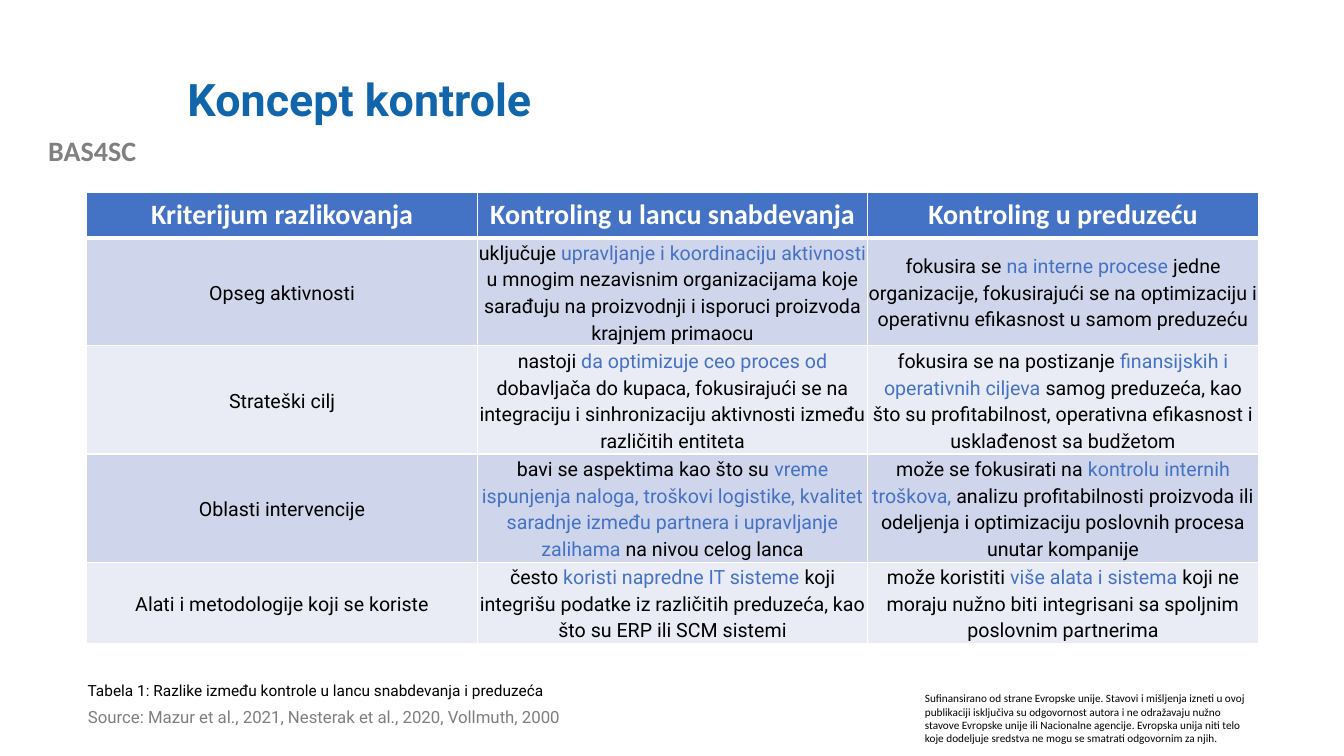
from lxml.etree import SubElement
from pptx import Presentation
from pptx.dml.color import RGBColor
from pptx.enum.text import MSO_ANCHOR, MSO_AUTO_SIZE, PP_ALIGN
from pptx.oxml.ns import qn
from pptx.util import Cm, Pt

WHITE = RGBColor(0xFF, 0xFF, 0xFF)
BLACK = RGBColor(0x00, 0x00, 0x00)
ACCENT = RGBColor(0x44, 0x72, 0xC4)
TITLE_BLUE = RGBColor(0x10, 0x65, 0xAB)
PROJECT_GREY = RGBColor(0x80, 0x80, 0x80)
SOURCE_GREY = RGBColor(0x7F, 0x7F, 0x7F)
BANDS = (RGBColor(0xCF, 0xD5, 0xEA), RGBColor(0xE9, 0xEB, 0xF5))

HEADINGS = ("Kriterijum razlikovanja", "Kontroling u lancu snabdevanja",
            "Kontroling u preduzeću")
# The part between two bars is highlighted.
CRITERIA = (
    ("Opseg aktivnosti",
     "uključuje |upravljanje i koordinaciju aktivnosti |u mnogim nezavisnim organizacijama "
     "koje sarađuju na proizvodnji i isporuci proizvoda krajnjem primaocu",
     "fokusira se |na interne procese |jedne organizacije, fokusirajući se na optimizaciju "
     "i operativnu efikasnost u samom preduzeću"),
    ("Strateški cilj",
     "nastoji |da optimizuje ceo proces od |dobavljača do kupaca, fokusirajući se na "
     "integraciju i sinhronizaciju aktivnosti između različitih entiteta",
     "fokusira se na postizanje |finansijskih i operativnih ciljeva |samog preduzeća, kao "
     "što su profitabilnost, operativna efikasnost i usklađenost sa budžetom"),
    ("Oblasti intervencije",
     "bavi se aspektima kao što su |vreme ispunjenja naloga, troškovi logistike, kvalitet "
     "saradnje između partnera i upravljanje zalihama |na nivou celog lanca",
     "može se fokusirati na |kontrolu internih troškova, |analizu profitabilnosti proizvoda "
     "ili odeljenja i optimizaciju poslovnih procesa unutar kompanije"),
    ("Alati i metodologije koji se koriste",
     "često |koristi napredne IT sisteme |koji integrišu podatke iz različitih preduzeća, "
     "kao što su ERP ili SCM sistemi",
     "može koristiti |više alata i sistema |koji ne moraju nužno biti integrisani sa "
     "spoljnim poslovnim partnerima"),
)
DISCLAIMER = (
    "Sufinansirano od strane Evropske unije. Stavovi i mišljenja izneti u ovoj publikaciji "
    "isključiva su odgovornost autora i ne odražavaju nužno stavove Evropske unije ili "
    "Nacionalne agencije. Evropska unija niti telo koje dodeljuje sredstva ne mogu se "
    "smatrati odgovornim za njih.")


def style_run(run, font_name, size, color, bold=False):
    run.font.name = font_name
    run.font.size = Pt(size)
    run.font.color.rgb = color
    run.font.bold = bold


def place(shape, left, top, width, height):
    shape.left, shape.top = Cm(left), Cm(top)
    shape.width, shape.height = Cm(width), Cm(height)


def add_label(slide, text, box, font_name, size, color, bold=False, align=PP_ALIGN.LEFT):
    label = slide.shapes.add_textbox(*map(Cm, box))
    frame = label.text_frame
    frame.word_wrap = True
    frame.auto_size = MSO_AUTO_SIZE.SHAPE_TO_FIT_TEXT
    frame.text = text
    frame.paragraphs[0].alignment = align
    style_run(frame.paragraphs[0].runs[0], font_name, size, color, bold)


def fill_title(title):
    place(title, 4.47, 1.02, 27.08, 3.1)
    title.text_frame.text = "Koncept kontrole"
    title.text_frame.vertical_anchor = MSO_ANCHOR.MIDDLE
    heading = title.text_frame.paragraphs[0]
    heading.alignment = PP_ALIGN.LEFT
    heading.line_spacing = 0.9
    style_run(heading.runs[0], "Roboto", 32, TITLE_BLUE, True)


def fill_source(body):
    place(body, 1.96, 17.78, 14.68, 0.66)
    frame = body.text_frame
    frame.text = "Source: Mazur et al., 2021, Nesterak et al., 2020, Vollmuth, 2000"
    frame.auto_size = MSO_AUTO_SIZE.NONE
    source = frame.paragraphs[0]
    properties = source._p.get_or_add_pPr()
    properties.set("marL", "0")
    properties.set("indent", "0")
    SubElement(properties, qn("a:buNone"))
    source.line_spacing = 0.8
    source.space_before = Pt(0)
    style_run(source.runs[0], "Roboto", 12, SOURCE_GREY)


def draw_borders(cell, top=1, bottom=1):
    """Add white cell borders; must run before the cell is filled."""
    properties = cell._tc.get_or_add_tcPr()
    for side, width in (("L", 1), ("R", 1), ("T", top), ("B", bottom)):
        line = SubElement(properties, qn(f"a:ln{side}"), w=str(Pt(width)))
        SubElement(SubElement(line, qn("a:solidFill")), qn("a:srgbClr"), val=str(WHITE))


def fill_cell(cell, color):
    cell.fill.solid()
    cell.fill.fore_color.rgb = color


def write_heading(cell, text):
    draw_borders(cell, bottom=3)
    fill_cell(cell, ACCENT)
    cell.text_frame.text = text
    heading = cell.text_frame.paragraphs[0]
    heading.alignment = PP_ALIGN.CENTER
    style_run(heading.runs[0], "Calibri", 20, WHITE, True)


def write_criterion(cell, text, band, top):
    draw_borders(cell, top=top)
    fill_cell(cell, band)
    cell.margin_left = cell.margin_right = cell.margin_top = cell.margin_bottom = 0
    cell.vertical_anchor = MSO_ANCHOR.MIDDLE
    description = cell.text_frame.paragraphs[0]
    description.alignment = PP_ALIGN.CENTER
    description.line_spacing = 1.15
    description.space_after = Pt(6)
    for index, part in enumerate(text.split("|")):
        run = description.add_run()
        run.text = part
        style_run(run, "Roboto", 14, ACCENT if index == 1 else BLACK)


def add_comparison(slide):
    heights = (1.13, 2.54, 2.54, 2.54, 1.88)
    comparison = slide.shapes.add_table(
        len(heights), len(HEADINGS), Cm(2.19), Cm(4.86), Cm(29.52), Cm(sum(heights))).table
    for row, height in zip(comparison.rows, heights):
        row.height = Cm(height)
    for column, heading in enumerate(HEADINGS):
        write_heading(comparison.cell(0, column), heading)
    for row, criterion in enumerate(CRITERIA, start=1):
        for column, text in enumerate(criterion):
            write_criterion(comparison.cell(row, column), text, BANDS[(row - 1) % 2],
                            top=3 if row == 1 else 1)


def main():
    presentation = Presentation()
    presentation.slide_width, presentation.slide_height = Cm(33.87), Cm(19.05)
    slide = presentation.slides.add_slide(presentation.slide_layouts[1])
    add_label(slide, "BAS4SC", (0, 3.25, 4.65, 1.12), "Calibri", 20, PROJECT_GREY,
              bold=True, align=PP_ALIGN.CENTER)
    add_label(slide, DISCLAIMER, (23.06, 17.3, 8.69, 1.63), "Calibri", 8, BLACK)
    fill_title(slide.shapes.title)
    fill_source(slide.placeholders[1])
    add_comparison(slide)
    add_label(slide, "Tabela 1: Razlike između kontrole u lancu snabdevanja i preduzeća",
              (1.96, 17.04, 27.71, 0.74), "Roboto", 11, BLACK)
    presentation.save("out.pptx")


if __name__ == "__main__":
    main()
